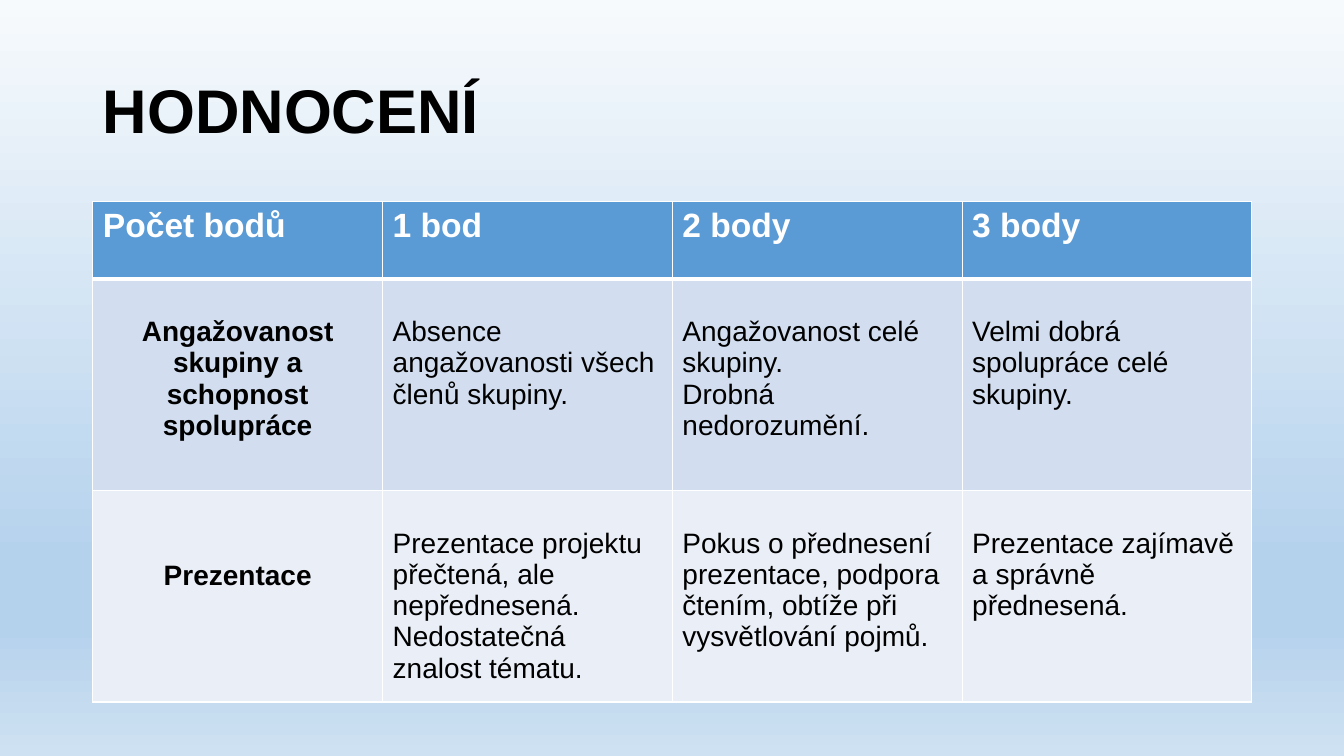
from lxml import etree
from pptx import Presentation
from pptx.dml.color import RGBColor
from pptx.enum.text import MSO_ANCHOR, PP_ALIGN
from pptx.oxml.ns import qn
from pptx.util import Cm, Pt

MIDDLE = MSO_ANCHOR.MIDDLE
LEFT, CENTER = PP_ALIGN.LEFT, PP_ALIGN.CENTER

TITLE = "HODNOCENÍ"
HEADER = ["Počet bodů", "1 bod", "2 body", "3 body"]
# Each cell is a list of paragraphs; the first cell names the criterion.
CRITERIA = [
    [
        ["Angažovanost skupiny a schopnost spolupráce"],
        ["Absence angažovanosti všech členů skupiny."],
        ["Angažovanost celé skupiny.", "Drobná nedorozumění."],
        ["Velmi dobrá spolupráce celé skupiny."],
    ],
    [
        ["Prezentace"],
        ["Prezentace projektu přečtená, ale nepřednesená. "
         "Nedostatečná znalost tématu."],
        ["Pokus o přednesení prezentace, podpora čtením, "
         "obtíže při vysvětlování pojmů."],
        ["Prezentace zajímavě a správně přednesená."],
    ],
]
COLORS = {
    "text": "000000",
    "white": "FFFFFF",
    "header": "5B9BD5",
    "first_row": "D2DEEF",
    "second_row": "EAEFF7",
}
BACKGROUND_STOPS = [(0, "F7FAFD"), (74, "B5D2EC"), (83, "B5D2EC"), (100, "CEE1F2")]

FONT = "Arial"
LEFT_EDGE, CONTENT_WIDTH = 2.34, 29.21
TITLE_TOP, TITLE_HEIGHT = 1.01, 3.68
TABLE_TOP = 5.08
ROW_HEIGHTS = [1.95, 5.33, 5.33]
CELL_MARGIN, TEXT_LINE = 0.13, 0.81
THIN, THICK = 1, 3


def paint_background(slide):
    fill = slide.background.fill
    fill.gradient()
    fill.gradient_angle = 270
    stops = next(slide.element.iter(qn("a:gsLst")))
    for stop in list(stops):
        stops.remove(stop)
    for position, color in BACKGROUND_STOPS:
        stop = etree.SubElement(stops, qn("a:gs"), pos=str(position * 1000))
        etree.SubElement(stop, qn("a:srgbClr"), val=color)


def write(text_frame, lines, size, color, bold, alignment=LEFT):
    text_frame.word_wrap = True
    for index, line in enumerate(lines):
        paragraph = text_frame.paragraphs[0] if index == 0 else text_frame.add_paragraph()
        paragraph.alignment = alignment
        run = paragraph.add_run()
        run.text = line
        run.font.name = FONT
        run.font.size = Pt(size)
        run.font.bold = bold
        run.font.color.rgb = RGBColor.from_string(COLORS[color])


def set_borders(cell, top, bottom):
    properties = cell._tc.get_or_add_tcPr()
    sides = [("L", THIN), ("R", THIN), ("T", top), ("B", bottom)]
    for index, (side, width) in enumerate(sides):
        line = etree.Element(qn(f"a:ln{side}"), w=str(Pt(width)))
        solid = etree.SubElement(line, qn("a:solidFill"))
        etree.SubElement(solid, qn("a:srgbClr"), val=COLORS["white"])
        properties.insert(index, line)


def style_cell(cell, fill_color, top, bottom):
    cell.fill.solid()
    cell.fill.fore_color.rgb = RGBColor.from_string(COLORS[fill_color])
    set_borders(cell, top, bottom)


def add_title(slide):
    box = slide.shapes.add_textbox(
        Cm(LEFT_EDGE), Cm(TITLE_TOP), Cm(CONTENT_WIDTH), Cm(TITLE_HEIGHT))
    box.text_frame.vertical_anchor = MIDDLE
    write(box.text_frame, [TITLE], 44, "text", True)
    box.text_frame.paragraphs[0].line_spacing = 0.9


def add_rubric(slide):
    table = slide.shapes.add_table(
        len(ROW_HEIGHTS), len(HEADER), Cm(LEFT_EDGE), Cm(TABLE_TOP),
        Cm(CONTENT_WIDTH), Cm(sum(ROW_HEIGHTS))).table
    table.horz_banding = False
    for row, height in zip(table.rows, ROW_HEIGHTS):
        row.height = Cm(height)

    for column, label in enumerate(HEADER):
        cell = table.cell(0, column)
        style_cell(cell, "header", THIN, THICK)
        write(cell.text_frame, [label], 24, "white", True)

    for row, criterion in enumerate(CRITERIA, start=1):
        for column, lines in enumerate(criterion):
            cell = table.cell(row, column)
            is_name = column == 0
            lines_above = 2 if is_name and row == 2 else 1
            cell.margin_top = Cm(CELL_MARGIN + lines_above * TEXT_LINE)
            style_cell(cell, "first_row" if row == 1 else "second_row",
                       THICK if row == 1 else THIN, THIN)
            write(cell.text_frame, lines, 20, "text", is_name,
                  CENTER if is_name else LEFT)


def main():
    presentation = Presentation()
    presentation.slide_width = Cm(33.87)
    presentation.slide_height = Cm(19.05)
    slide = presentation.slides.add_slide(presentation.slide_layouts[6])
    paint_background(slide)
    add_title(slide)
    add_rubric(slide)
    presentation.save("out.pptx")


if __name__ == "__main__":
    main()
